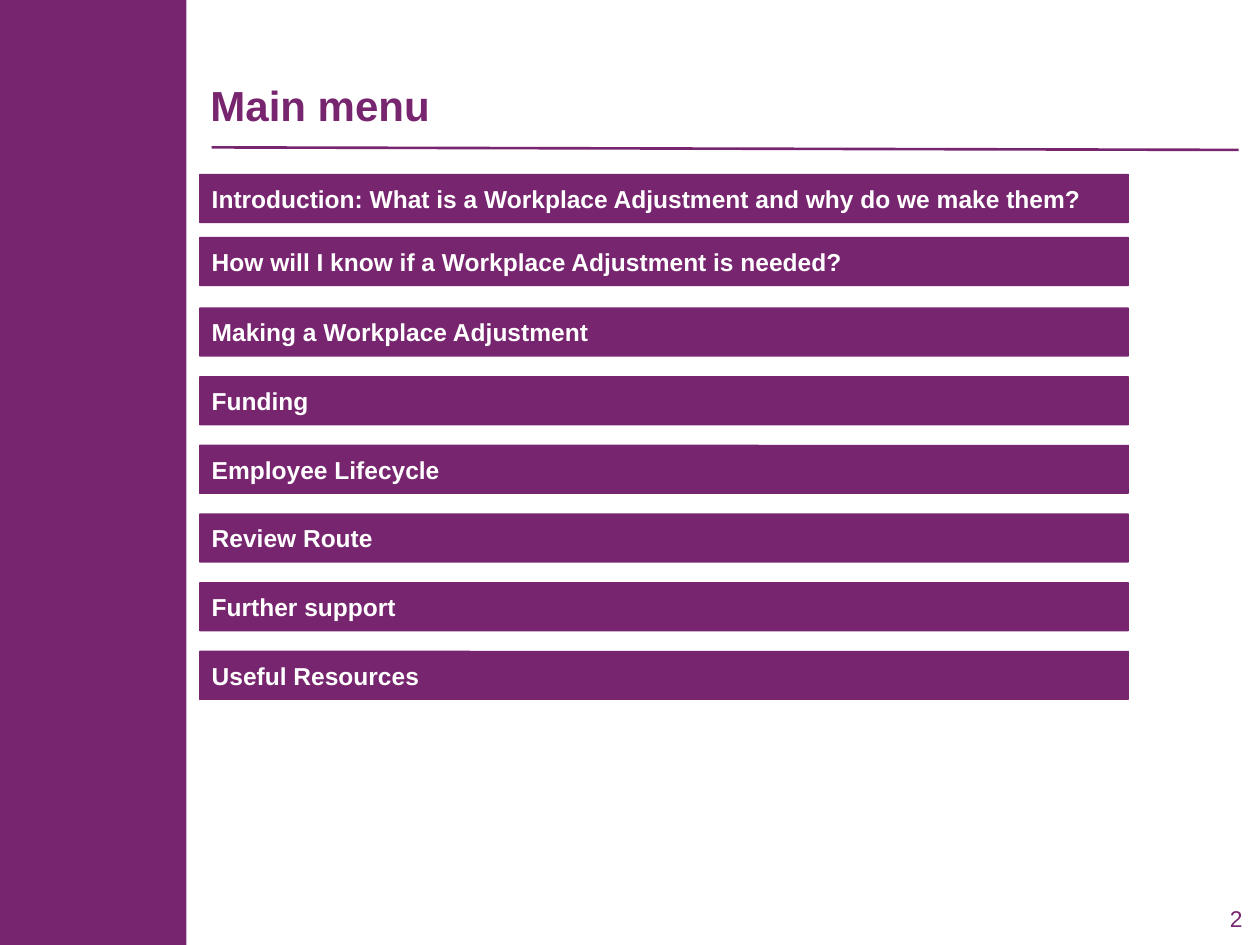
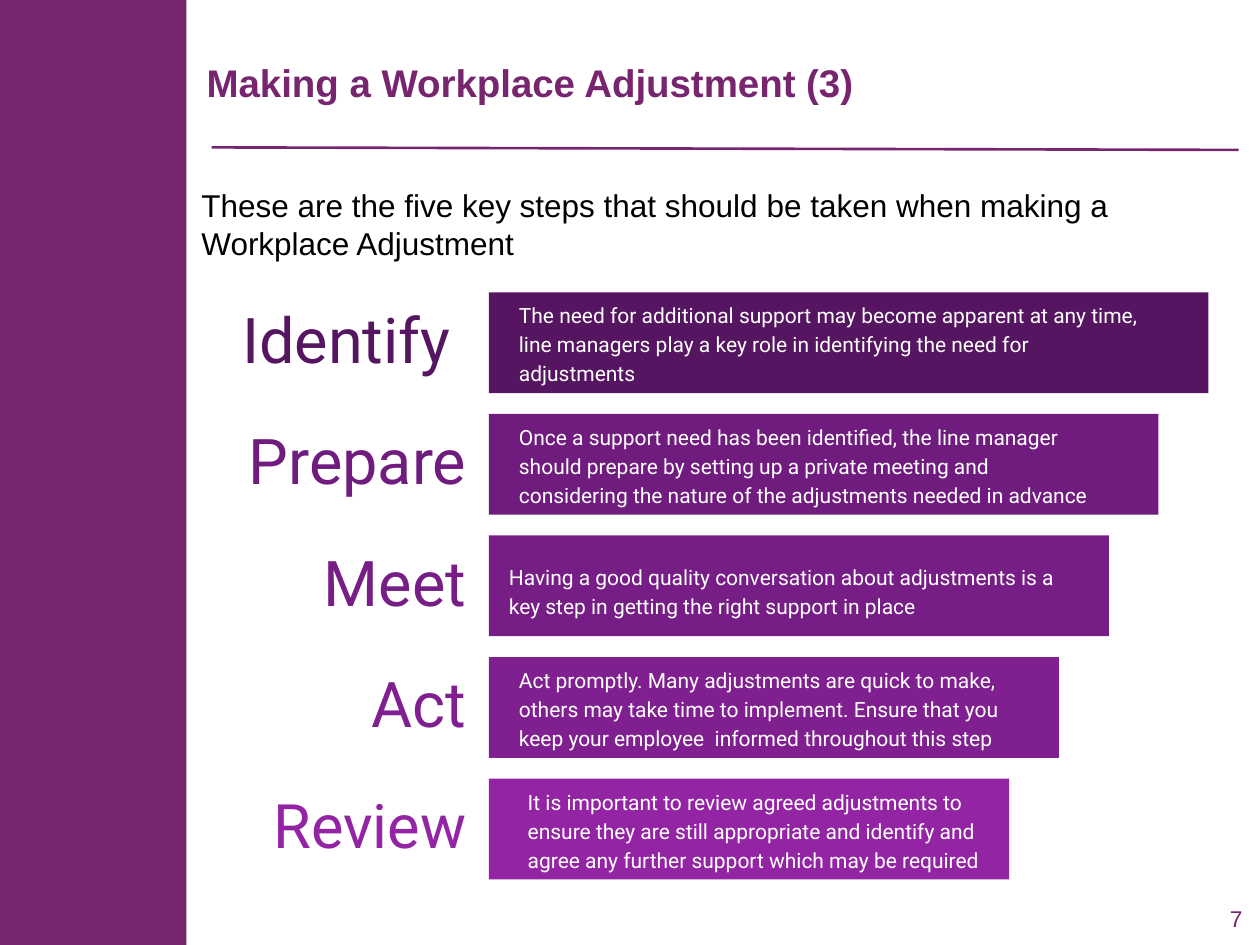
"""Build the Workplace Adjustment main menu and five key steps slides."""
import pptx
import pptx.util
import pptx.dml.color
import pptx.enum.shapes
import pptx.enum.text
import lxml.etree

Inches = pptx.util.Inches
RGBColor = pptx.dml.color.RGBColor
SHAPE = pptx.enum.shapes.MSO_SHAPE
ANCHOR = pptx.enum.text.MSO_ANCHOR
ALIGN = pptx.enum.text.PP_ALIGN

PURPLE = RGBColor(0x78, 0x25, 0x6F)
WHITE = RGBColor(0xFF, 0xFF, 0xFF)
BLACK = RGBColor(0, 0, 0)
HEADING_FONT = "Arial"
STEP_FONT = "Roboto"

MENU_TITLE = "Main menu"
INTRODUCTION_ITEMS = [
    "Introduction: What is a Workplace Adjustment and why do we make them?",
    "How will I know if a Workplace Adjustment is needed?",
]
TOPIC_ITEMS = [
    "Making a Workplace Adjustment",
    "Funding",
    "Employee Lifecycle",
    "Review Route",
    "Further support",
    "Useful Resources",
]
MENU_GROUPS = [(1.38, 0.5, INTRODUCTION_ITEMS), (2.44, 0.545, TOPIC_ITEMS)]

STEPS_TITLE = "Making a Workplace Adjustment (3)"
STEPS_INTRODUCTION = (
    "These are the five key steps that should be taken when making a "
    "Workplace Adjustment"
)
# label, label size, colour, text left, text width, text drop, text
STEPS = [
    ("Identify ", 36, RGBColor(0x56, 0x15, 0x61), 4.02, 5.21, 0,
     "The need for additional support may become apparent at any time, line "
     "managers play a key role in identifying the need for adjustments"),
    ("Prepare", 36, RGBColor(0x70, 0x1C, 0x7F), 4.02, 4.78, 0,
     "Once a support need has been identified, the line manager should prepare "
     "by setting up a private meeting and considering the nature of the "
     "adjustments needed in advance"),
    ("Meet", 36, RGBColor(0x77, 0x1E, 0x86), 3.94, 4.72, 0.03,
     "Having a good quality conversation about adjustments is a key step in "
     "getting the right support in place"),
    ("Act", 36, RGBColor(0x80, 0x20, 0x90), 4.02, 4.21, 0,
     "Act promptly. Many adjustments are quick to make, others may take time to "
     "implement. Ensure that you keep your employee  informed throughout this step"),
    ("Review", 35, RGBColor(0x93, 0x25, 0xA5), 4.09, 3.83, 0,
     "It is important to review agreed adjustments to ensure they are still "
     "appropriate and identify and agree any further support which may be required"),
]
STEP_TOP, STEP_PITCH, STEP_HEIGHT = 2.32, 0.965, 0.8
BAR_LEFT, BAR_WIDTH, BAR_SHRINK = 3.88, 5.71, 0.395
LABEL_LEFT, LABEL_WIDTH = 1.44, 2.36


def write_text(shape, text, size, colour, font=HEADING_FONT, bold=False,
               anchor=ANCHOR.MIDDLE, align=ALIGN.LEFT, spacing=1.0, insets=(0.1, 0.05)):
    frame = shape.text_frame
    frame.word_wrap = True
    frame.vertical_anchor = anchor
    frame.margin_left = frame.margin_right = Inches(insets[0])
    frame.margin_top = frame.margin_bottom = Inches(insets[1])
    frame.text = text
    para = frame.paragraphs[0]
    para.alignment = align
    para.line_spacing = spacing
    for span in para.runs:
        span.font.name = font
        span.font.size = pptx.util.Pt(size)
        span.font.bold = bold
        span.font.color.rgb = colour


def add_text(page, place, text, size, colour, **style):
    box = page.shapes.add_textbox(*map(Inches, place))
    write_text(box, text, size, colour, **style)


def add_bar(page, place, colour, kind=SHAPE.RECTANGLE):
    bar = page.shapes.add_shape(kind, *map(Inches, place))
    bar.shadow.inherit = False
    bar.fill.solid()
    bar.fill.fore_color.rgb = colour
    bar.line.fill.background()
    return bar


def add_page(deck, title, title_place, title_size, number):
    page = deck.slides.add_slide(deck.slide_layouts[6])
    rule = page.shapes.add_connector(
        pptx.enum.shapes.MSO_CONNECTOR.STRAIGHT,
        *map(Inches, (1.68, 1.17, 9.83, 1.19)))
    rule.line.color.rgb = PURPLE
    rule.line.width = pptx.util.Pt(1.5)
    properties = rule._element.spPr
    lxml.etree.SubElement(properties, pptx.oxml.ns.qn("a:effectLst"))
    add_bar(page, (0, 0, 1.48, 7.5), PURPLE)
    add_text(page, title_place, title, title_size, PURPLE, bold=True, insets=(0, 0))
    add_text(page, (9.36, 6.93, 0.6, 0.57), str(number), 13, PURPLE,
             anchor=ANCHOR.BOTTOM, align=ALIGN.RIGHT, insets=(0.1, 0.1))
    return page


def build_menu(deck):
    page = add_page(deck, MENU_TITLE, (1.67, 0.64, 5.12, 0.38), 24, 2)
    for top, pitch, items in MENU_GROUPS:
        for index, item in enumerate(items):
            place = (1.58, top + index * pitch, 7.38, 0.39)
            button = add_bar(page, place, PURPLE, SHAPE.ROUNDED_RECTANGLE)
            button.adjustments[0] = 0.02
            write_text(button, item, 14, WHITE, bold=True)


def build_steps(deck):
    page = add_page(deck, STEPS_TITLE, (1.64, 0.3, 8.04, 0.71), 22, 7)
    add_text(page, (1.5, 1.38, 8.28, 1.1), STEPS_INTRODUCTION, 18, BLACK,
             anchor=ANCHOR.TOP, insets=(0.1, 0.1))
    for index, (label, size, colour, left, width, drop, text) in enumerate(STEPS):
        top = STEP_TOP + index * STEP_PITCH
        add_text(page, (LABEL_LEFT, top, LABEL_WIDTH, STEP_HEIGHT), label, size, colour,
                 font=STEP_FONT, align=ALIGN.RIGHT, spacing=0.9)
        bar_width = BAR_WIDTH - index * BAR_SHRINK
        add_bar(page, (BAR_LEFT, top, bar_width, STEP_HEIGHT), colour)
        add_text(page, (left, top + drop, width, STEP_HEIGHT), text, 12, WHITE,
                 font=STEP_FONT, spacing=1.15)


def main():
    deck = pptx.Presentation()
    deck.slide_width, deck.slide_height = Inches(10), Inches(7.5)
    build_menu(deck)
    build_steps(deck)
    deck.save("out.pptx")


if __name__ == "__main__":
    main()
